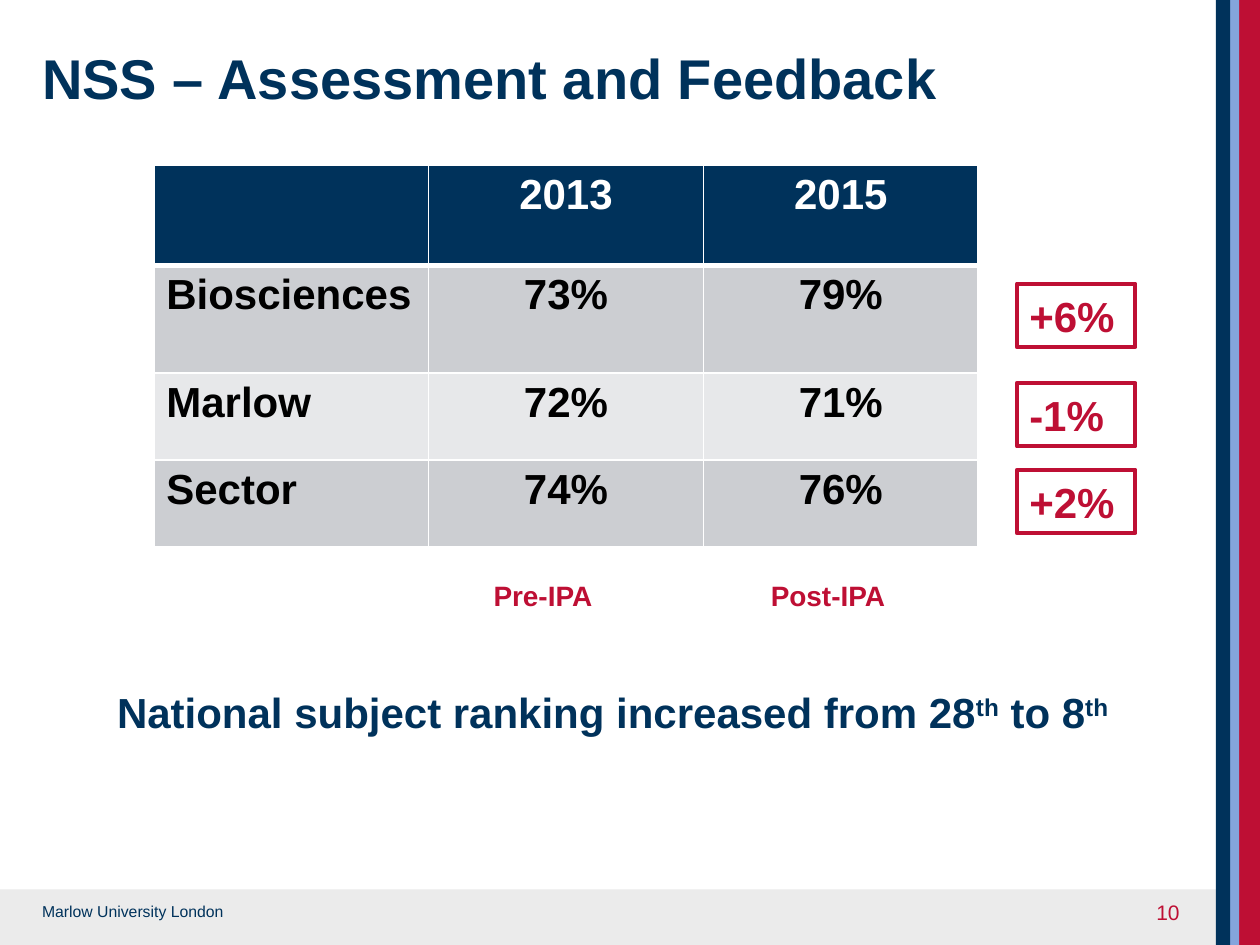
from lxml import etree
from pptx import Presentation
from pptx.dml.color import RGBColor
from pptx.enum.shapes import MSO_SHAPE
from pptx.enum.text import MSO_ANCHOR, PP_ALIGN
from pptx.oxml.ns import qn
from pptx.util import Cm, Pt

RECTANGLE = MSO_SHAPE.RECTANGLE
MIDDLE = MSO_ANCHOR.MIDDLE
LEFT, CENTER, RIGHT = PP_ALIGN.LEFT, PP_ALIGN.CENTER, PP_ALIGN.RIGHT

NAVY, RED, SKY = "00325B", "BE0F34", "84A5DC"
WHITE, BLACK, FOOTER_GREY = "FFFFFF", "000000", "EBEBEB"
BAND_DARK, BAND_LIGHT = "CCCED2", "E7E8EA"
SLIDE_WIDTH, SLIDE_HEIGHT = 25.4, 19.05

RESULTS = [
    ("", "2013", "2015"),
    ("Biosciences", "73%", "79%"),
    ("Marlow", "72%", "71%"),
    ("Sector", "74%", "76%"),
]
ROW_HEIGHTS = [2.02, 2.17, 1.75, 1.75]
COLUMN_WIDTH = 5.54


def rgb(value):
    return RGBColor.from_string(value)


def add_run(paragraph, text, size, color, bold=False):
    run = paragraph.add_run()
    run.text = text
    run.font.name = "Arial"
    run.font.size = Pt(size)
    run.font.bold = bold
    run.font.color.rgb = rgb(color)
    return run


def add_band(slide, left, top, width, height, color):
    band = slide.shapes.add_shape(RECTANGLE, Cm(left), Cm(top), Cm(width), Cm(height))
    band.shadow.inherit = False
    band.fill.solid()
    band.fill.fore_color.rgb = rgb(color)
    band.line.fill.background()


def add_label(slide, box, text, size, color, bold=False, align=LEFT):
    """Add a wrapped text box and return its paragraph for further runs."""
    label = slide.shapes.add_textbox(*(Cm(length) for length in box))
    label.text_frame.word_wrap = True
    paragraph = label.text_frame.paragraphs[0]
    paragraph.alignment = align
    add_run(paragraph, text, size, color, bold)
    return paragraph


def add_change_box(slide, top, text):
    change = slide.shapes.add_shape(RECTANGLE, Cm(20.5), Cm(top), Cm(2.39), Cm(1.28))
    change.shadow.inherit = False
    change.fill.background()
    change.line.color.rgb = rgb(RED)
    change.line.width = Pt(2.25)
    change.text_frame.vertical_anchor = MIDDLE
    paragraph = change.text_frame.paragraphs[0]
    paragraph.alignment = LEFT
    add_run(paragraph, text, 24, RED, bold=True)


def add_cell_border(cell, side, points):
    line = etree.SubElement(cell._tc.get_or_add_tcPr(), qn(f"a:ln{side}"), w=str(Pt(points)))
    fill = etree.SubElement(line, qn("a:solidFill"))
    etree.SubElement(fill, qn("a:srgbClr"), val=WHITE)


def fill_cell(cell, text, row, column):
    heavy_side = {0: "B", 1: "T"}.get(row)
    for side in "LRTB":
        add_cell_border(cell, side, 3 if side == heavy_side else 1)
    cell.fill.solid()
    band = BAND_DARK if row % 2 else BAND_LIGHT
    cell.fill.fore_color.rgb = rgb(band if row else NAVY)
    if text:
        paragraph = cell.text_frame.paragraphs[0]
        paragraph.alignment = CENTER if column else LEFT
        add_run(paragraph, text, 24, BLACK if row else WHITE, bold=True)


def add_results_table(slide):
    columns = len(RESULTS[0])
    table = slide.shapes.add_table(
        len(RESULTS), columns, Cm(3.1), Cm(3.33),
        Cm(COLUMN_WIDTH * columns), Cm(sum(ROW_HEIGHTS)),
    ).table
    for column in table.columns:
        column.width = Cm(COLUMN_WIDTH)
    for row, (values, height) in enumerate(zip(RESULTS, ROW_HEIGHTS)):
        table.rows[row].height = Cm(height)
        for column, value in enumerate(values):
            fill_cell(table.cell(row, column), value, row, column)


def add_ranking(slide):
    ranking = add_label(slide, (2.11, 13.72, 21.59, 1.28),
                        "National subject ranking increased from 28", 24, NAVY, bold=True)
    for text, raised in [("th", True), (" to 8", False), ("th", True)]:
        run = add_run(ranking, text, 24, NAVY, bold=True)
        if raised:
            run._r.get_or_add_rPr().set("baseline", "30000")


def main():
    presentation = Presentation()
    presentation.slide_width = Cm(SLIDE_WIDTH)
    presentation.slide_height = Cm(SLIDE_HEIGHT)
    slide = presentation.slides.add_slide(presentation.slide_layouts[6])

    add_band(slide, 0, 17.93, SLIDE_WIDTH, 1.12, FOOTER_GREY)
    for left, width, color in [(24.98, 0.42, RED), (24.8, 0.18, SKY), (24.51, 0.29, NAVY)]:
        add_band(slide, left, 0, width, SLIDE_HEIGHT, color)

    add_label(slide, (0.6, 18.06, 4.9, 0.64), "Marlow University London", 9, NAVY)
    add_label(slide, (0.6, 0.76, 23.11, 2.57), "NSS – Assessment and Feedback", 32, NAVY, bold=True)
    add_label(slide, (18.11, 18.01, 5.92, 0.76), "10", 12, RED, align=RIGHT)
    add_ranking(slide)
    for left, phase in [(9.7, "Pre-IPA"), (15.29, "Post-IPA")]:
        add_label(slide, (left, 11.53, 3.2, 0.94), phase, 16, RED, bold=True)

    add_results_table(slide)
    for top, change in [(5.72, "+6%"), (7.72, "-1%"), (9.47, "+2%")]:
        add_change_box(slide, top, change)

    presentation.save("out.pptx")


if __name__ == "__main__":
    main()
